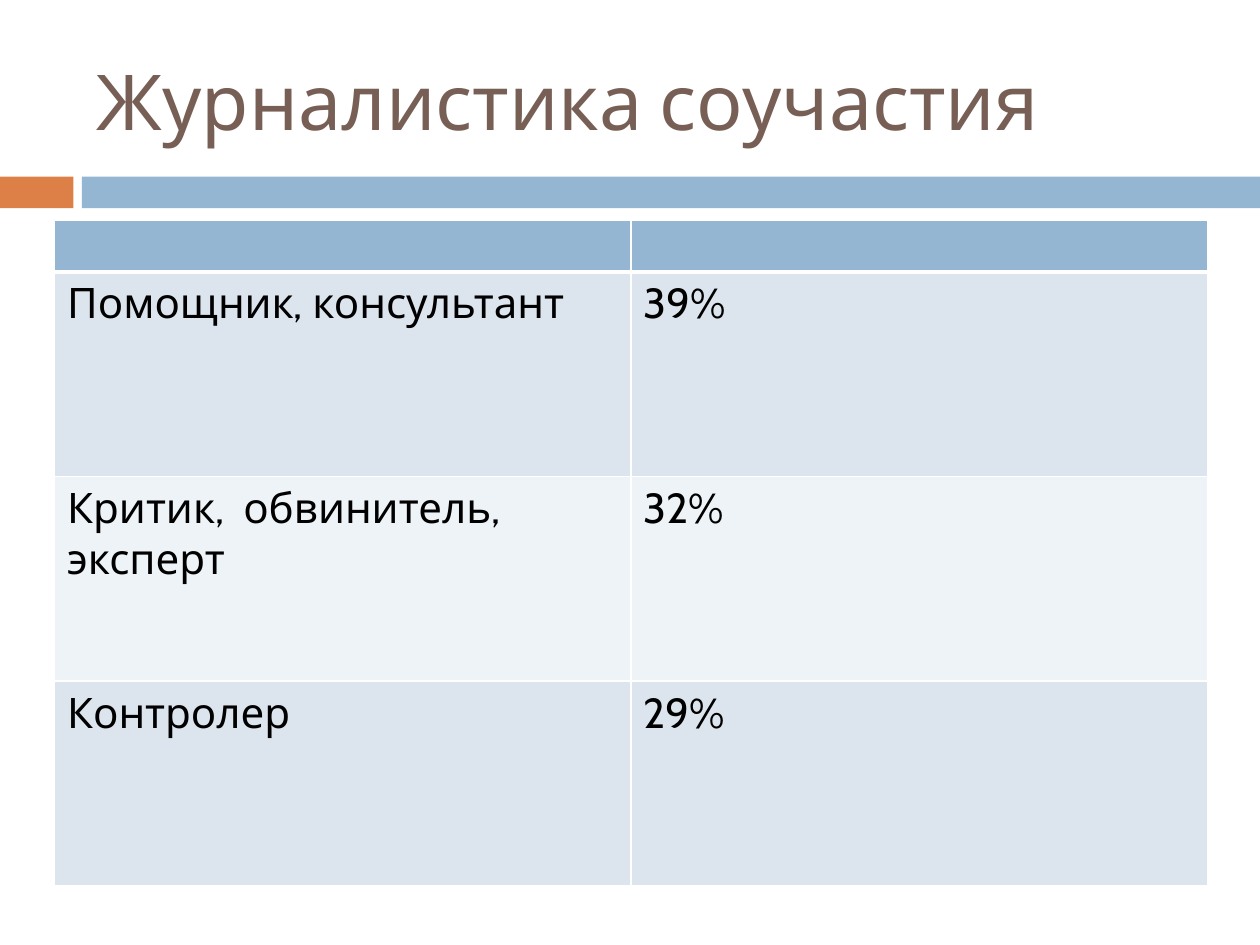
import dataclasses

import pptx
import pptx.dml.color
import pptx.enum.shapes
import pptx.enum.text
import pptx.oxml
import pptx.oxml.ns
import pptx.util

Cm = pptx.util.Cm
Pt = pptx.util.Pt


@dataclasses.dataclass(frozen=True)
class Theme:
    font: str = "Cabin"
    title_size: int = 44
    body_size: int = 24
    title: str = "775F55"
    body: str = "000000"
    accent: str = "DD8047"
    band: str = "94B6D2"
    odd_row: str = "DCE5EE"
    even_row: str = "EEF3F7"
    rule: str = "FFFFFF"
    thin: int = 1
    thick: int = 3


THEME = Theme()
ROLES = [
    ("Помощник, консультант", "39%"),
    ("Критик,  обвинитель, эксперт", "32%"),
    ("Контролер", "29%"),
]


def rgb(value):
    return pptx.dml.color.RGBColor.from_string(value)


def write(frame, text, *, size, color, align=pptx.enum.text.PP_ALIGN.LEFT,
          anchor=pptx.enum.text.MSO_ANCHOR.TOP):
    frame.word_wrap = True
    frame.vertical_anchor = anchor
    paragraph = frame.paragraphs[0]
    paragraph.alignment = align
    run = paragraph.add_run()
    run.text = text
    run.font.name = THEME.font
    run.font.size = Pt(size)
    run.font.color.rgb = rgb(color)


def add_block(slide, left, top, width, height, color):
    block = slide.shapes.add_shape(
        pptx.enum.shapes.MSO_SHAPE.RECTANGLE, left, top, width, height)
    block.shadow.inherit = False
    block.fill.solid()
    block.fill.fore_color.rgb = rgb(color)
    block.line.fill.background()


def add_divider(slide, left, top, width, height):
    """Draw a short accent block, a gap, and a band filling the rest."""
    accent_width, gap = Cm(1.48), Cm(0.17)
    band_offset = accent_width + gap
    add_block(slide, left, top, accent_width, height, THEME.accent)
    add_block(slide, left + band_offset, top, width - band_offset, height,
              THEME.band)


def add_title(slide, text, left, top, width, height):
    title = slide.shapes.title
    title.left, title.top, title.width, title.height = left, top, width, height
    write(title.text_frame, text, size=THEME.title_size, color=THEME.title,
          anchor=pptx.enum.text.MSO_ANCHOR.MIDDLE)


def set_borders(cell, **widths):
    """Rule the cell's sides, given as L, R, T and B in points."""
    properties = cell._tc.get_or_add_tcPr()
    for side in "LRTB":
        width = Pt(widths.get(side, THEME.thin))
        properties.append(pptx.oxml.parse_xml(
            f'<a:ln{side} {pptx.oxml.ns.nsdecls("a")} w="{width}"><a:solidFill>'
            f'<a:srgbClr val="{THEME.rule}"/></a:solidFill></a:ln{side}>'))


def fill_cell(cell, color):
    cell.fill.solid()
    cell.fill.fore_color.rgb = rgb(color)


def add_roles_table(slide, roles, left, top, width, height):
    header_height = Cm(1)
    table = slide.shapes.add_table(
        len(roles) + 1, 2, left, top, width, height).table
    for column in table.columns:
        column.width = width // 2
    for row in table.rows:
        row.height = (height - header_height) // len(roles)
    table.rows[0].height = header_height

    for cell in table.rows[0].cells:
        set_borders(cell, B=THEME.thick)
        fill_cell(cell, THEME.band)
    for number, role in enumerate(roles, start=1):
        color = THEME.odd_row if number % 2 else THEME.even_row
        top_rule = THEME.thick if number == 1 else THEME.thin
        for cell, text in zip(table.rows[number].cells, role):
            set_borders(cell, T=top_rule)
            fill_cell(cell, color)
            write(cell.text_frame, text, size=THEME.body_size,
                  color=THEME.body)


def main():
    deck = pptx.Presentation()
    deck.slide_width, deck.slide_height = Cm(25.4), Cm(19.05)
    slide = deck.slides.add_slide(deck.slide_layouts.get_by_name("Title Only"))
    add_divider(slide, 0, Cm(3.56), deck.slide_width, Cm(0.64))
    add_title(slide, "Журналистика соучастия",
              Cm(1.7), Cm(0.64), Cm(22.66), Cm(2.74))
    add_roles_table(slide, ROLES, Cm(1.1), Cm(4.45), Cm(23.24), Cm(13.38))
    deck.save("out.pptx")


if __name__ == "__main__":
    main()
